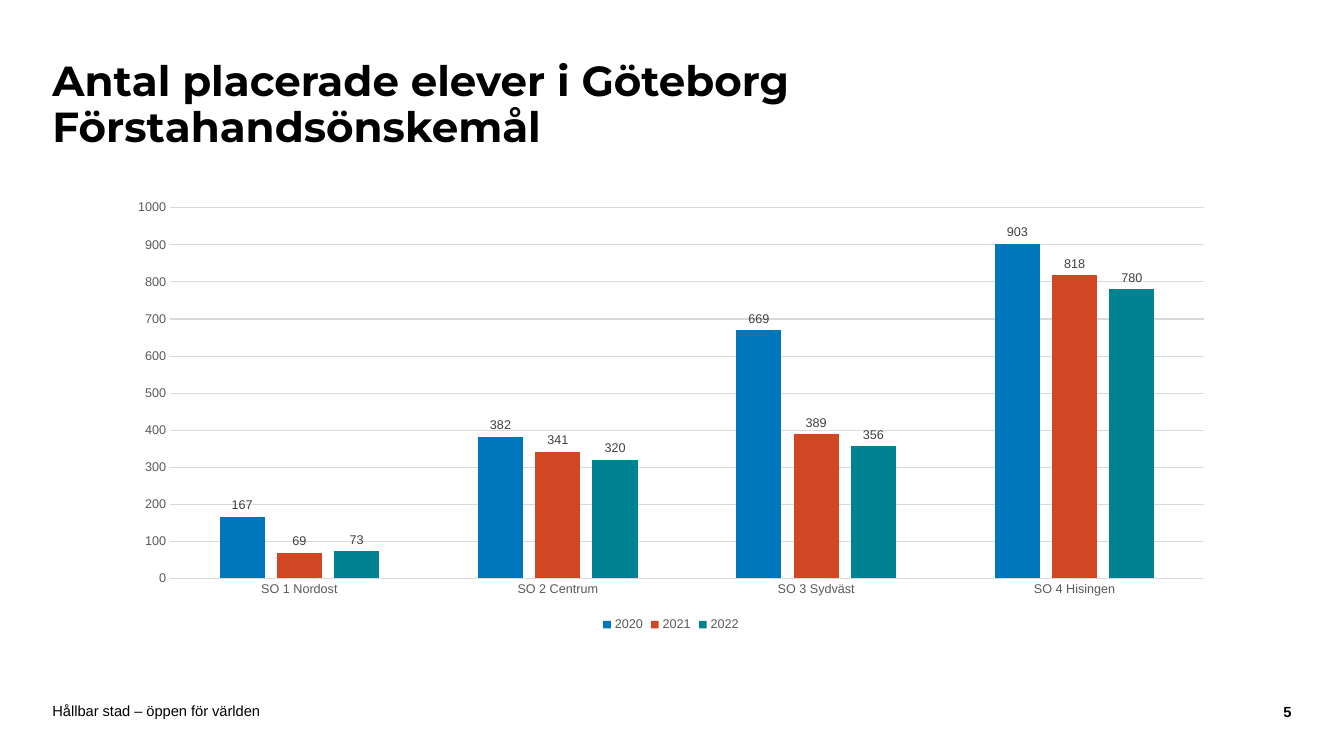
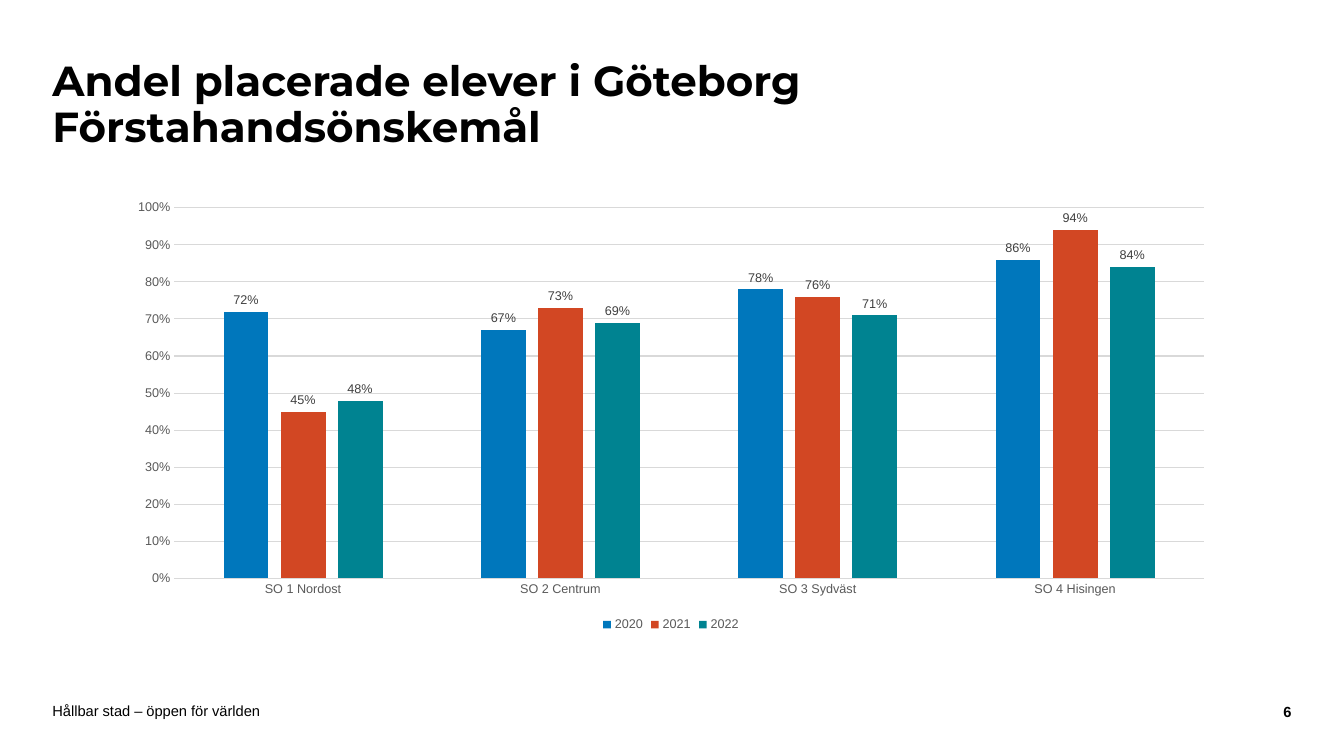
from pptx import Presentation
from pptx.chart.data import CategoryChartData as ChartData
from pptx.dml.color import RGBColor as RGB
from pptx.enum.chart import XL_CHART_TYPE as Kind
from pptx.enum.chart import XL_LABEL_POSITION as LabelPos
from pptx.enum.chart import XL_LEGEND_POSITION as LegendPos
from pptx.enum.chart import XL_TICK_MARK as Tick
from pptx.enum.text import MSO_ANCHOR as Anchor
from pptx.enum.text import MSO_AUTO_SIZE as Fit
from pptx.enum.text import PP_ALIGN as Align
from pptx.util import Inches, Pt

AREAS = ["SO 1 Nordost", "SO 2 Centrum", "SO 3 Sydväst", "SO 4 Hisingen"]
YEARS = ["2020", "2021", "2022"]
FOOTER = "Hållbar stad – öppen för världen"
FIRST = 5
SLIDES = [
    {
        "title": "Antal placerade elever i Göteborg\vFörstahandsönskemål",
        "rows": [(167, 382, 669, 903), (69, 341, 389, 818), (73, 320, 356, 780)],
        "format": "General", "top": 1000, "step": 100,
    },
    {
        "title": "Andel placerade elever i Göteborg\vFörstahandsönskemål",
        "rows": [(0.72, 0.67, 0.78, 0.86), (0.45, 0.73, 0.76, 0.94),
                 (0.48, 0.69, 0.71, 0.84)],
        "format": "0%", "top": 1, "step": 0.1,
    },
]

COLORS = {"text": "000000", "axis": "595959", "label": "404040", "grid": "D9D9D9",
          "2020": "0077BC", "2021": "D24723", "2022": "008391"}
BODY, HEAD = "Arial", "Montserrat"
WIDE, HIGH = 13.33, 7.5
EDGE = 0.52
BOXES = {
    "title": (EDGE, 0.42, 10.03, 1.26),
    "chart": (1.15, 1.9, 11.01, 4.41),
    "footer": (EDGE, 6.97, 9.45, 0.16),
    "number": (WIDE - EDGE - 0.64, 6.98, 0.64, 0.16),
}


def place(name):
    return [Inches(n) for n in BOXES[name]]


def color(name):
    return RGB.from_string(COLORS[name])


def style(font, size, tone="text", face=BODY, bold=False):
    font.size, font.name, font.bold = Pt(size), face, bold
    font.color.rgb = color(tone)


def fill_text(shape, text, size, pad=0, align=Align.LEFT, **look):
    frame = shape.text_frame
    frame.text = text
    frame.word_wrap = True
    frame.auto_size = Fit.NONE
    frame.vertical_anchor = Anchor.MIDDLE
    frame.margin_left = frame.margin_right = 0
    frame.margin_top = frame.margin_bottom = Inches(pad)
    para = frame.paragraphs[0]
    para.alignment = align
    for run in para.runs:
        style(run.font, size, **look)
    return para


def add_title(slide, text):
    title = slide.shapes.title
    title.left, title.top, title.width, title.height = place("title")
    para = fill_text(title, text, 30, pad=0.05, face=HEAD, bold=True)
    para.line_spacing = 0.9


def add_footer(slide, number):
    footer = slide.shapes.add_textbox(*place("footer"))
    fill_text(footer, FOOTER, 10.5)
    page = slide.shapes.add_textbox(*place("number"))
    fill_text(page, str(number), 10.5, align=Align.RIGHT, bold=True)


def rule(line):
    line.color.rgb = color("grid")
    line.width = Pt(0.75)


def style_axes(chart, item):
    for axis in (chart.category_axis, chart.value_axis):
        axis.major_tick_mark = axis.minor_tick_mark = Tick.NONE
        style(axis.tick_labels.font, 9, "axis")
    rule(chart.category_axis.format.line)
    scale = chart.value_axis
    scale.format.line.fill.background()
    scale.has_major_gridlines = True
    rule(scale.major_gridlines.format.line)
    scale.minimum_scale, scale.maximum_scale = 0, item["top"]
    scale.major_unit = item["step"]
    scale.tick_labels.number_format = item["format"]
    scale.tick_labels.number_format_is_linked = False


def add_chart(slide, item):
    data = ChartData(number_format=item["format"])
    data.categories = AREAS
    for year, row in zip(YEARS, item["rows"]):
        data.add_series(year, row)
    chart = slide.shapes.add_chart(
        Kind.COLUMN_CLUSTERED, *place("chart"), data).chart
    style(chart.font, 10)
    chart.has_title = False
    chart.has_legend = True
    chart.legend.position = LegendPos.BOTTOM
    chart.legend.include_in_layout = False
    style(chart.legend.font, 9, "axis")
    style_axes(chart, item)

    plot = chart.plots[0]
    plot.gap_width, plot.overlap = 219, -27
    plot.vary_by_categories = False
    for year, series in zip(YEARS, plot.series):
        series.format.fill.solid()
        series.format.fill.fore_color.rgb = color(year)
        series.invert_if_negative = False
        labels = series.data_labels
        labels.show_value = True
        labels.position = LabelPos.OUTSIDE_END
        labels.number_format = item["format"]
        labels.number_format_is_linked = False
        style(labels.font, 9, "label")


def main():
    deck = Presentation()
    deck.slide_width, deck.slide_height = Inches(WIDE), Inches(HIGH)
    for number, item in enumerate(SLIDES, FIRST):
        slide = deck.slides.add_slide(deck.slide_layouts[5])
        add_title(slide, item["title"])
        add_chart(slide, item)
        add_footer(slide, number)
    deck.save("out.pptx")


if __name__ == "__main__":
    main()
